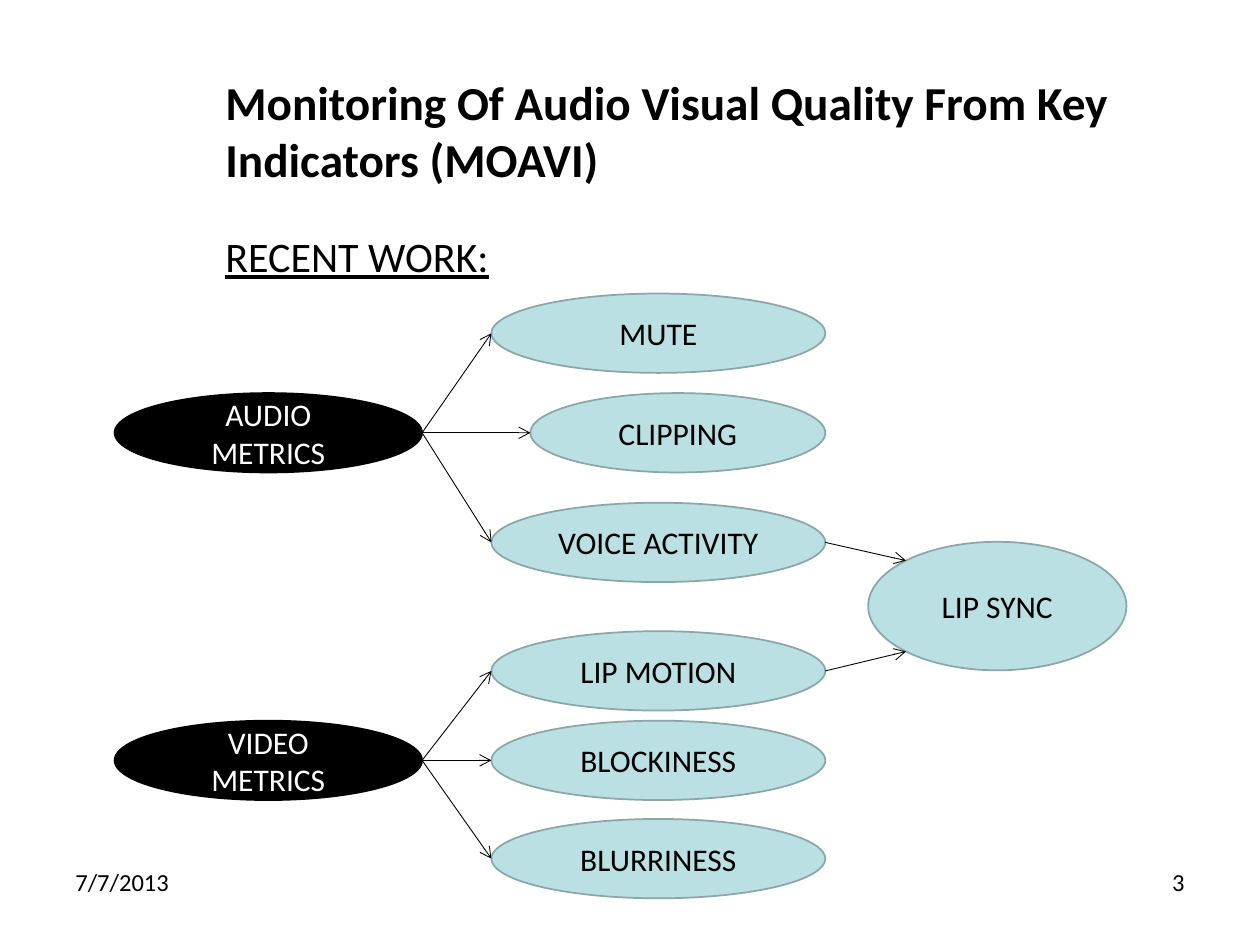
from lxml import etree
from pptx import Presentation
from pptx import util as u
from pptx.dml.color import RGBColor
from pptx.enum import shapes, text
from pptx.oxml import ns

BLACK = RGBColor(0x00, 0x00, 0x00)
WHITE = RGBColor(0xFF, 0xFF, 0xFF)
PALE_TEAL = RGBColor(0xBB, 0xE0, 0xE3)
GREY_TEAL = RGBColor(0x8A, 0xA6, 0xA8)

DIAGONAL = 0.5 ** 0.5  # where a 45 degree ray meets an ellipse, per radius


class MetricsSlide:
    font_name = "Calibri"

    def __init__(self, slide):
        self.slide = slide

    def set_words(self, frame, words, color, align, anchor, **formats):
        frame.word_wrap = True
        frame.vertical_anchor = anchor
        paragraph = frame.paragraphs[0]
        paragraph.alignment = align
        run = paragraph.add_run()
        run.text = words
        run.font.color.rgb = color
        for name, value in {"name": self.font_name, **formats}.items():
            setattr(run.font, name, value)

    def label(self, words, box, size, align=text.PP_ALIGN.LEFT,
              anchor=text.MSO_ANCHOR.TOP, **formats):
        area = self.slide.shapes.add_textbox(*map(u.Inches, box))
        self.set_words(area.text_frame, words, BLACK, align, anchor,
                       size=u.Pt(size), **formats)

    def ellipse(self, words, box, fill=PALE_TEAL, line=GREY_TEAL, color=BLACK):
        oval = self.slide.shapes.add_shape(
            shapes.MSO_SHAPE.OVAL, *map(u.Inches, box))
        oval.shadow.inherit = False
        oval.fill.solid()
        oval.fill.fore_color.rgb = fill
        oval.line.color.rgb = line
        oval.line.width = u.Pt(1)
        self.set_words(oval.text_frame, words, color, text.PP_ALIGN.CENTER,
                       text.MSO_ANCHOR.MIDDLE, size=u.Pt(18))

    def arrow(self, start, end):
        link = self.slide.shapes.add_connector(
            shapes.MSO_CONNECTOR.STRAIGHT, *map(u.Inches, (*start, *end)))
        link.line.color.rgb = BLACK
        link.line.width = u.Pt(0.5)
        properties = link._element.spPr
        etree.SubElement(properties.find(ns.qn("a:ln")), ns.qn("a:tailEnd"),
                         type="arrow")
        etree.SubElement(properties, ns.qn("a:effectLst"))


def left_side(box):
    return box[0], box[1] + box[3] / 2


def right_side(box):
    return box[0] + box[2], box[1] + box[3] / 2


def main():
    deck = Presentation()
    deck.slide_width, deck.slide_height = u.Inches(10), u.Inches(7.5)
    page = MetricsSlide(deck.slides.add_slide(deck.slide_layouts[6]))

    # Heading
    page.label("Monitoring Of Audio Visual Quality From Key Indicators (MOAVI)",
               (1.69, 0.52, 7.81, 1.03), 27,
               anchor=text.MSO_ANCHOR.MIDDLE, bold=True)
    page.label("RECENT WORK:", (1.69, 1.78, 7.81, 4.92), 24, underline=True)

    # Metric groups: source top, then (name, left, top) of each metric
    height, metrics_right = 0.63, 6.55
    groups = {
        "AUDIO METRICS": (3.12, [("MUTE", 3.9, 2.33), ("CLIPPING", 4.21, 3.12),
                                 ("VOICE ACTIVITY", 3.9, 3.99)]),
        "VIDEO METRICS": (5.72, [("LIP MOTION", 3.9, 5.01),
                                 ("BLOCKINESS", 3.9, 5.72),
                                 ("BLURRINESS", 3.9, 6.5)]),
    }
    metric_boxes = {}
    for group, (group_top, metrics) in groups.items():
        group_box = (0.91, group_top, 2.44, height)
        page.ellipse(group, group_box, BLACK, BLACK, WHITE)
        for metric, left, top in metrics:
            box = (left, top, metrics_right - left, height)
            metric_boxes[metric] = box
            page.ellipse(metric, box)
            page.arrow(right_side(group_box), left_side(box))

    # Lip sync, fed by one metric of each group
    sync_box = (6.89, 4.3, 2.05, 1.02)
    page.ellipse("LIP SYNC", sync_box)
    left, top, width, tall = sync_box
    for metric, side in (("VOICE ACTIVITY", -1), ("LIP MOTION", 1)):
        entry = (left + width / 2 * (1 - DIAGONAL),
                 top + tall / 2 * (1 + side * DIAGONAL))
        page.arrow(right_side(metric_boxes[metric]), entry)

    # Footer
    page.label("7/7/2013", (0.5, 6.83, 2.33, 0.52), 14)
    page.label("3", (7.17, 6.83, 2.33, 0.52), 14, text.PP_ALIGN.RIGHT)

    deck.save("out.pptx")


if __name__ == "__main__":
    main()
